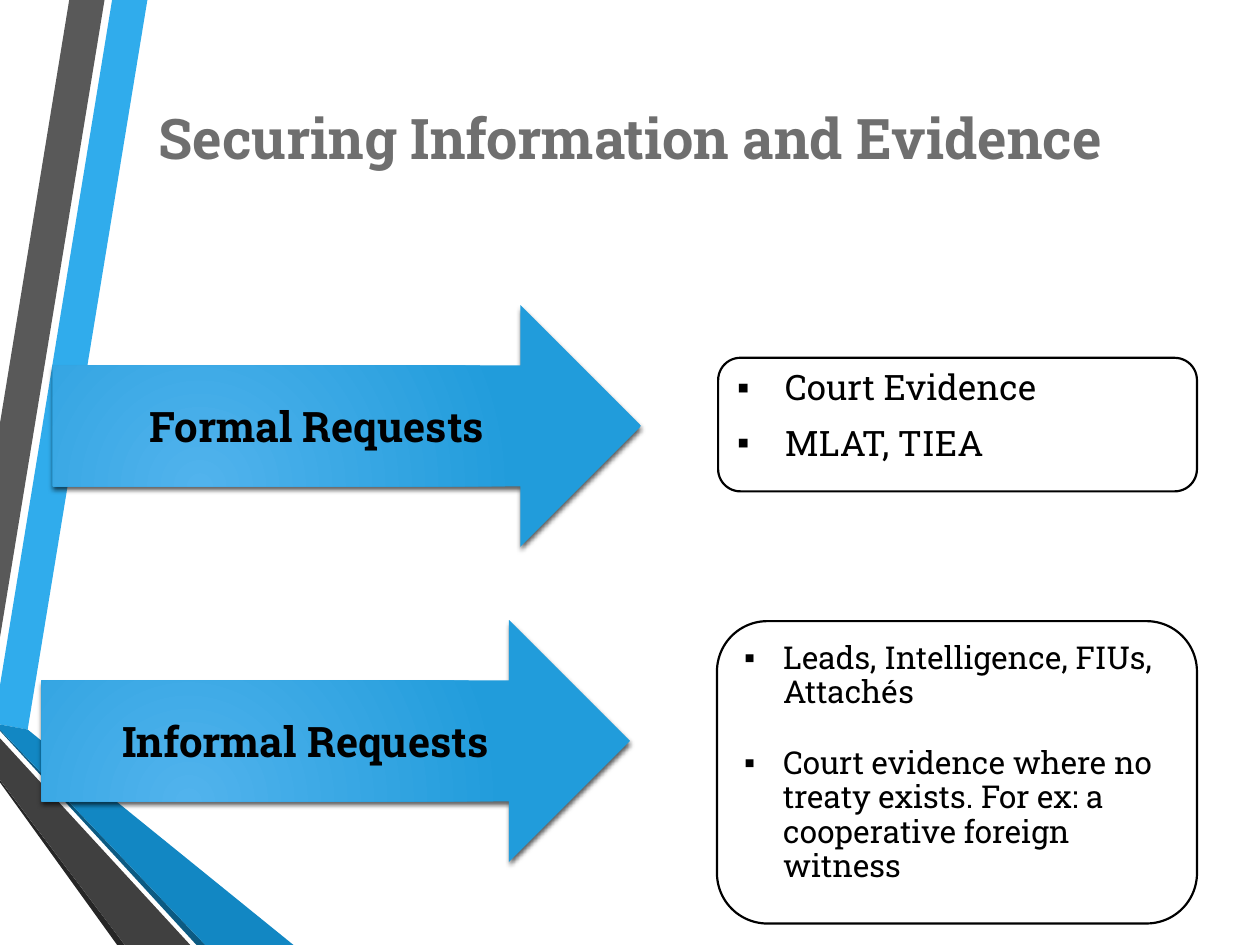
import pptx
import pptx.util
import pptx.oxml
import pptx.oxml.ns
from pptx.dml.color import RGBColor
from pptx.enum.shapes import MSO_SHAPE
from pptx.enum.text import MSO_ANCHOR, PP_ALIGN
from pptx.util import Inches

FONT = "Roboto Slab"
BLACK = RGBColor(0x00, 0x00, 0x00)
WHITE = RGBColor(0xFF, 0xFF, 0xFF)
TITLE_GREY = RGBColor(0x6F, 0x6F, 0x6F)
ARROW_LIGHT = RGBColor(0x51, 0xB3, 0xED)
ARROW_DARK = RGBColor(0x21, 0x9C, 0xDB)

RIBBONS = [
    (RGBColor(0x30, 0xAC, 0xEC),
     [(0, 5.44), (0, 5.75), (0.22, 5.79), (1.17, 0), (0.89, 0)]),
    (RGBColor(0x59, 0x59, 0x59), [(0.83, 0), (0.55, 0), (0, 3.36), (0, 5.06)]),
    (RGBColor(0x26, 0x26, 0x26), [(0, 6.19), (0, 6.21), (0.93, 7.5), (0.99, 7.5)]),
    (RGBColor(0x0C, 0x5A, 0x82), [(0, 5.79), (0, 5.8), (1.56, 7.5), (1.63, 7.5)]),
    (RGBColor(0x12, 0x87, 0xC3),
     [(0, 5.79), (1.63, 7.5), (2.33, 7.5), (0.22, 5.79), (0, 5.75)]),
    (RGBColor(0x40, 0x40, 0x40), [(0, 6.19), (0.99, 7.5), (1.51, 7.5), (0, 5.86)]),
]

ROWS = [
    ("Formal Requests", (0.42, 2.42, 4.67, 1.92),
     ["Court Evidence", "MLAT, TIEA"], (5.7, 2.84, 3.8, 1.06), 20, 0.38, 10),
    ("Informal Requests", (0.33, 4.92, 4.67, 1.92),
     ["Leads, Intelligence, FIUs, Attachés",
      "Court evidence where no treaty exists. For ex: a cooperative foreign witness"],
     (5.69, 4.93, 3.81, 2.4), 18, 0.31, 21.5),
]


def parse(body):
    """Return a drawing element parsed from its markup."""
    tag, rest = body.split(" ", 1)
    return pptx.oxml.parse_xml(f"{tag} {pptx.oxml.ns.nsdecls('a')} {rest}")


def format_runs(p, size, color, bold=False):
    """Format every run of a paragraph."""
    for r in p.runs:
        r.font.name = FONT
        r.font.size = pptx.util.Pt(size)
        r.font.bold = bold
        r.font.color.rgb = color


def add_ribbons(s):
    """Draw the folded ribbons along the left edge."""
    for color, points in RIBBONS:
        corners = [(Inches(x), Inches(y)) for x, y in points]
        builder = s.shapes.build_freeform(*corners[0])
        builder.add_line_segments(corners[1:], close=True)
        sp = builder.convert_to_shape()
        sp.shadow.inherit = False
        sp.fill.solid()
        sp.fill.fore_color.rgb = color
        sp.line.fill.background()


def set_title(s, text, box):
    """Place and format the slide title."""
    sp = s.shapes.title
    sp.left, sp.top, sp.width, sp.height = map(Inches, box)
    tf = sp.text_frame
    tf.text = text
    tf.word_wrap = False
    tf.vertical_anchor = MSO_ANCHOR.TOP
    p = tf.paragraphs[0]
    p.alignment = PP_ALIGN.CENTER
    p.line_spacing = 0.9
    format_runs(p, 32, TITLE_GREY, True)


def add_arrow(s, text, box):
    """Add a labelled block arrow with a radial gradient and soft shadow."""
    sp = s.shapes.add_shape(MSO_SHAPE.RIGHT_ARROW, *map(Inches, box))
    sp.line.fill.background()
    gradient = parse(
        '<a:gradFill rotWithShape="1"><a:gsLst>'
        f'<a:gs pos="0"><a:srgbClr val="{ARROW_LIGHT}"/></a:gs>'
        f'<a:gs pos="100000"><a:srgbClr val="{ARROW_DARK}"/></a:gs></a:gsLst>'
        '<a:path path="circle"><a:fillToRect l="50000" t="100000" r="100000" b="50000"/>'
        '</a:path></a:gradFill>')
    shadow = parse(
        f'<a:effectLst ><a:outerShdw blurRad="{pptx.util.Pt(3)}" dist="{pptx.util.Pt(2)}" '
        'dir="5400000" rotWithShape="0"><a:srgbClr val="000000"><a:alpha val="64000"/>'
        '</a:srgbClr></a:outerShdw></a:effectLst>')
    props = sp.element.spPr
    props.find(pptx.oxml.ns.qn("a:prstGeom")).addnext(gradient)
    props.append(shadow)
    tf = sp.text_frame
    tf.text = text
    tf.word_wrap = True
    tf.vertical_anchor = MSO_ANCHOR.MIDDLE
    p = tf.paragraphs[0]
    p.alignment = PP_ALIGN.CENTER
    format_runs(p, 24, BLACK, True)


def add_bullet_box(s, items, box, size, indent, gap):
    """Add an outlined rounded box holding a bulleted list."""
    sp = s.shapes.add_shape(MSO_SHAPE.ROUNDED_RECTANGLE, *map(Inches, box))
    sp.shadow.inherit = False
    sp.fill.solid()
    sp.fill.fore_color.rgb = WHITE
    sp.line.color.rgb = BLACK
    sp.line.width = pptx.util.Pt(1.25)
    tf = sp.text_frame
    tf.text = "\n".join(items)
    tf.word_wrap = True
    tf.vertical_anchor = MSO_ANCHOR.TOP
    for i, p in enumerate(tf.paragraphs):
        p.alignment = PP_ALIGN.LEFT
        p.line_spacing = 0.9
        p.space_before = pptx.util.Pt(gap if i else 0)
        format_runs(p, size, BLACK)
        props = p._p.get_or_add_pPr()
        props.set("marL", str(Inches(indent)))
        props.set("indent", str(-Inches(indent)))
        props.append(parse('<a:buClr ><a:srgbClr val="000000"/></a:buClr>'))
        props.append(parse('<a:buFont typeface="Arial"/>'))
        props.append(parse('<a:buChar char="▪"/>'))


def main():
    """Build the slide and save it."""
    prs = pptx.Presentation()
    prs.slide_width, prs.slide_height = Inches(10), Inches(7.5)
    s = prs.slides.add_slide(prs.slide_layouts[5])
    add_ribbons(s)
    set_title(s, "Securing Information and Evidence", (0.76, 0.83, 8.49, 0.64))
    for label, arrow_box, items, list_box, size, indent, gap in ROWS:
        add_arrow(s, label, arrow_box)
        add_bullet_box(s, items, list_box, size, indent, gap)
    prs.save("out.pptx")


if __name__ == "__main__":
    main()
